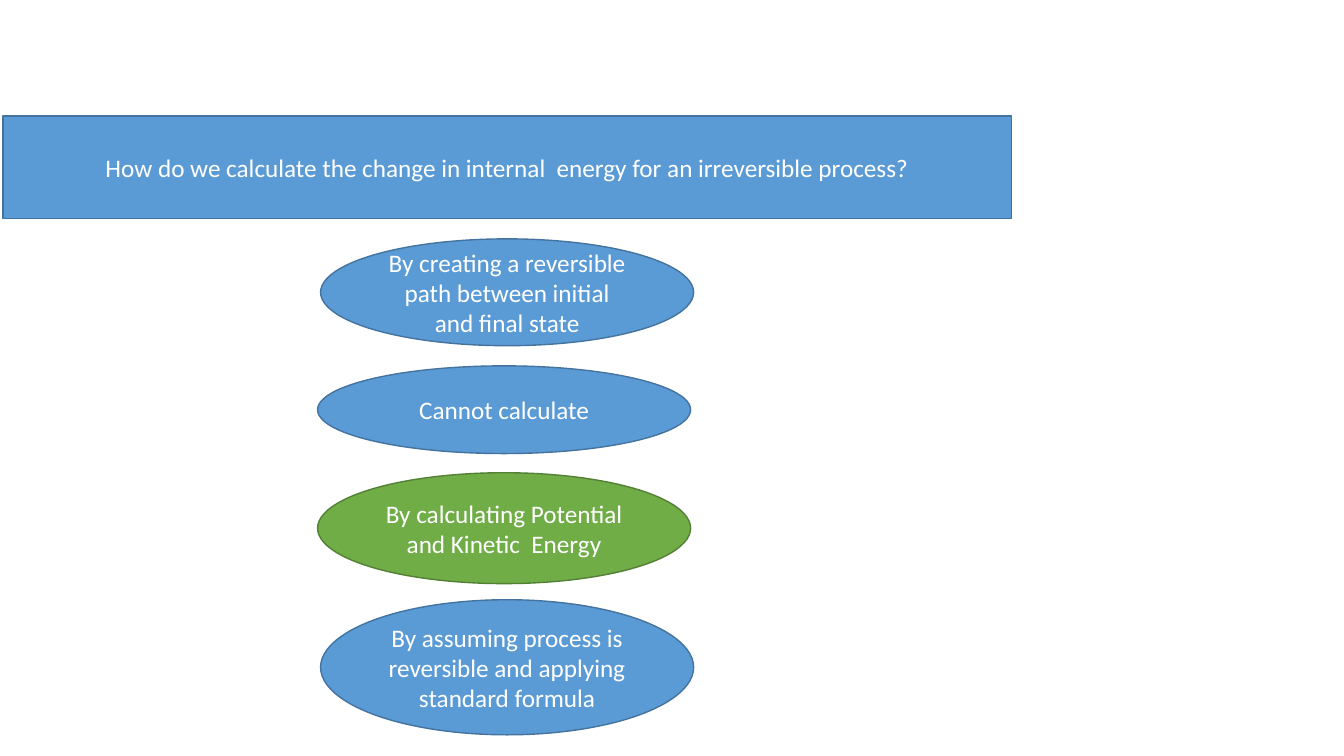
from dataclasses import dataclass

from pptx import Presentation
from pptx.dml.color import RGBColor
from pptx.enum.shapes import MSO_SHAPE
from pptx.enum.text import MSO_ANCHOR, MSO_AUTO_SIZE, PP_ALIGN
from pptx.shapes.autoshape import Shape
from pptx.slide import Slide
from pptx.util import Inches, Pt


@dataclass(frozen=True)
class Tone:
    fill: RGBColor
    line: RGBColor


@dataclass(frozen=True)
class Theme:
    blue: Tone = Tone(RGBColor(0x5B, 0x9B, 0xD5), RGBColor(0x43, 0x73, 0x9E))
    green: Tone = Tone(RGBColor(0x70, 0xAD, 0x47), RGBColor(0x53, 0x80, 0x35))
    text: RGBColor = RGBColor(0xFF, 0xFF, 0xFF)
    font: str = "Calibri"
    size: Pt = Pt(18)
    outline: Pt = Pt(1)


THEME = Theme()


@dataclass(frozen=True)
class Answer:
    text: str
    left: float
    top: float
    height: float
    tone: Tone = THEME.blue


QUESTION = "How do we calculate the change in internal  energy for an irreversible process?"
ANSWER_WIDTH = 3.7
ANSWERS = (
    Answer("By creating a reversible path between initial and final state", 3.18, 2.37, 1.06),
    Answer("Cannot calculate", 3.15, 3.63, 0.87),
    Answer("By calculating Potential and Kinetic  Energy", 3.15, 4.69, 1.1, THEME.green),
    Answer("By assuming process is reversible and applying standard formula", 3.18, 5.95, 1.34),
)


def style_shape(shape: Shape, text: str, tone: Tone) -> None:
    """Give a shape its fill, outline and centred text."""
    shape.fill.solid()
    shape.fill.fore_color.rgb = tone.fill
    shape.line.color.rgb = tone.line
    shape.line.width = THEME.outline
    shape.shadow.inherit = False

    frame = shape.text_frame
    frame.word_wrap = True
    frame.auto_size = MSO_AUTO_SIZE.NONE
    frame.vertical_anchor = MSO_ANCHOR.MIDDLE
    paragraph = frame.paragraphs[0]
    paragraph.alignment = PP_ALIGN.CENTER
    run = paragraph.add_run()
    run.text = text
    run.font.name = THEME.font
    run.font.size = THEME.size
    run.font.color.rgb = THEME.text


def add_question(slide: Slide) -> None:
    question = slide.shapes.title
    question.left, question.top = Inches(0.03), Inches(1.15)
    question.width, question.height = Inches(10), Inches(1.02)
    style_shape(question, QUESTION, THEME.blue)


def add_answer(slide: Slide, answer: Answer) -> None:
    ellipse = slide.shapes.add_shape(
        MSO_SHAPE.OVAL,
        Inches(answer.left),
        Inches(answer.top),
        Inches(ANSWER_WIDTH),
        Inches(answer.height),
    )
    style_shape(ellipse, answer.text, answer.tone)


def main() -> None:
    presentation = Presentation()
    presentation.slide_width = Inches(13.33)
    presentation.slide_height = Inches(7.5)
    title_only = presentation.slide_layouts.get_by_name("Title Only")
    slide = presentation.slides.add_slide(title_only)
    add_question(slide)
    for answer in ANSWERS:
        add_answer(slide, answer)
    presentation.save("out.pptx")


if __name__ == "__main__":
    main()
